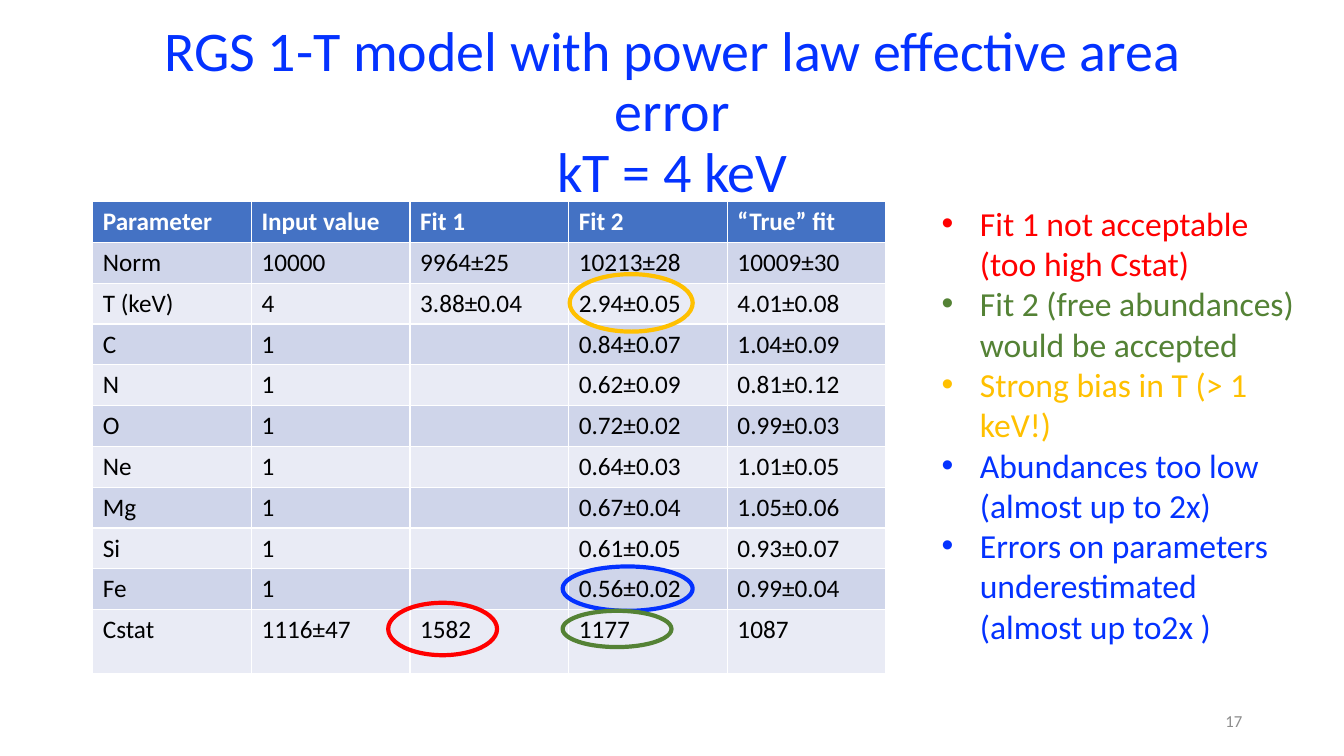
from typing import NamedTuple

from pptx import Presentation
from pptx.dml.color import RGBColor
from pptx.enum import shapes, text
from pptx.oxml import parse_xml
from pptx.oxml.ns import nsdecls
from pptx.util import Inches, Pt

FONT = "Calibri"
COLORS = {
    "blue": "0432FF",
    "red": "FF0000",
    "green": "548235",
    "gold": "FFC000",
    "gray": "8C8C8C",
    "black": "000000",
    "white": "FFFFFF",
    "header": "4472C4",
    "odd_row": "CFD5EA",
    "even_row": "E9EBF5",
}
FIT_RESULTS = [
    ("Parameter", "Input value", "Fit 1", "Fit 2", "“True” fit"),
    ("Norm", "10000", "9964±25", "10213±28", "10009±30"),
    ("T (keV)", "4", "3.88±0.04", "2.94±0.05", "4.01±0.08"),
    ("C", "1", "", "0.84±0.07", "1.04±0.09"),
    ("N", "1", "", "0.62±0.09", "0.81±0.12"),
    ("O", "1", "", "0.72±0.02", "0.99±0.03"),
    ("Ne", "1", "", "0.64±0.03", "1.01±0.05"),
    ("Mg", "1", "", "0.67±0.04", "1.05±0.06"),
    ("Si", "1", "", "0.61±0.05", "0.93±0.07"),
    ("Fe", "1", "", "0.56±0.02", "0.99±0.04"),
    ("Cstat", "1116±47", "1582", "1177", "1087"),
]
COLUMN_WIDTH, ROW_HEIGHT, LAST_ROW_HEIGHT = 1.574, 0.405, 0.64


class Box(NamedTuple):
    left: float
    top: float
    width: float
    height: float

    def lengths(self) -> list:
        return [Inches(value) for value in self]


class Finding(NamedTuple):
    wording: str
    color: str


class Highlight(NamedTuple):
    box: Box
    color: str


FINDINGS = [
    Finding("Fit 1 not acceptable (too high Cstat)", "red"),
    Finding("Fit 2 (free abundances) would be accepted", "green"),
    Finding("Strong bias in T (> 1 keV!)", "gold"),
    Finding("Abundances too low (almost up to 2x)", "blue"),
    Finding("Errors on parameters underestimated (almost up to2x )", "blue"),
]
HIGHLIGHTS = [
    Highlight(Box(3.85, 5.98, 1.08, 0.52), "red"),
    Highlight(Box(5.65, 2.72, 1.22, 0.57), "gold"),
    Highlight(Box(5.58, 5.62, 1.29, 0.44), "blue"),
    Highlight(Box(5.58, 6.06, 1.08, 0.36), "green"),
]


def rgb(name: str) -> RGBColor:
    return RGBColor.from_string(COLORS[name])


def style(paragraph, size: float, color: str, bold: bool = False) -> None:
    font = paragraph.font
    font.name, font.size, font.bold = FONT, Pt(size), bold
    font.color.rgb = rgb(color)


def add_text_frame(slide, box: Box, anchor=text.MSO_ANCHOR.TOP):
    frame = slide.shapes.add_textbox(*box.lengths()).text_frame
    frame.word_wrap = True
    frame.vertical_anchor = anchor
    return frame


def add_title(slide) -> None:
    frame = add_text_frame(slide, Box(0.92, 0.4, 11.5, 1.45), text.MSO_ANCHOR.MIDDLE)
    paragraph = frame.paragraphs[0]
    paragraph.text = "RGS 1-T model with power law effective area error\vkT = 4 keV"
    paragraph.alignment = text.PP_ALIGN.CENTER
    paragraph.line_spacing = 0.9
    style(paragraph, 40, "blue")


def add_fit_table(slide) -> None:
    row_count, column_count = len(FIT_RESULTS), len(FIT_RESULTS[0])
    height = ROW_HEIGHT * (row_count - 1) + LAST_ROW_HEIGHT
    box = Box(0.92, 2, COLUMN_WIDTH * column_count, height)
    table = slide.shapes.add_table(row_count, column_count, *box.lengths()).table
    for row in table.rows:
        row.height = Inches(ROW_HEIGHT)
    table.rows[row_count - 1].height = Inches(LAST_ROW_HEIGHT)
    for row_index, values in enumerate(FIT_RESULTS):
        is_header = row_index == 0
        fill = "header" if is_header else ("even_row", "odd_row")[row_index % 2]
        for column_index, value in enumerate(values):
            cell = table.cell(row_index, column_index)
            cell.text = value
            cell.fill.solid()
            cell.fill.fore_color.rgb = rgb(fill)
            color = "white" if is_header else "black"
            style(cell.text_frame.paragraphs[0], 18, color, is_header)


def add_bullet(paragraph) -> None:
    properties = paragraph._p.get_or_add_pPr()
    properties.set("marL", str(Inches(0.38)))
    properties.set("indent", str(Inches(-0.38)))
    properties.append(parse_xml(f'<a:buFont {nsdecls("a")} typeface="Arial"/>'))
    properties.append(parse_xml(f'<a:buChar {nsdecls("a")} char="•"/>'))


def add_findings(slide) -> None:
    frame = add_text_frame(slide, Box(9.24, 1.96, 3.81, 4.54))
    for index, finding in enumerate(FINDINGS):
        paragraph = frame.add_paragraph() if index else frame.paragraphs[0]
        paragraph.text = finding.wording
        add_bullet(paragraph)
        style(paragraph, 24, finding.color)


def add_highlight(slide, highlight: Highlight) -> None:
    """Ring a table value with an unfilled ellipse."""
    shape = slide.shapes.add_shape(
        shapes.MSO_SHAPE.OVAL, *highlight.box.lengths()
    )
    shape.shadow.inherit = False
    shape.fill.background()
    shape.line.color.rgb = rgb(highlight.color)
    shape.line.width = Pt(3)


def add_slide_number(slide) -> None:
    frame = add_text_frame(slide, Box(9.42, 6.95, 3, 0.4), text.MSO_ANCHOR.MIDDLE)
    paragraph = frame.paragraphs[0]
    paragraph.text = "17"
    paragraph.alignment = text.PP_ALIGN.RIGHT
    style(paragraph, 12, "gray")


def main() -> None:
    presentation = Presentation()
    presentation.slide_width = Inches(13.33)
    presentation.slide_height = Inches(7.5)
    slide = presentation.slides.add_slide(presentation.slide_layouts[6])
    add_title(slide)
    add_fit_table(slide)
    add_findings(slide)
    for highlight in HIGHLIGHTS:
        add_highlight(slide, highlight)
    add_slide_number(slide)
    presentation.save("out.pptx")


if __name__ == "__main__":
    main()
